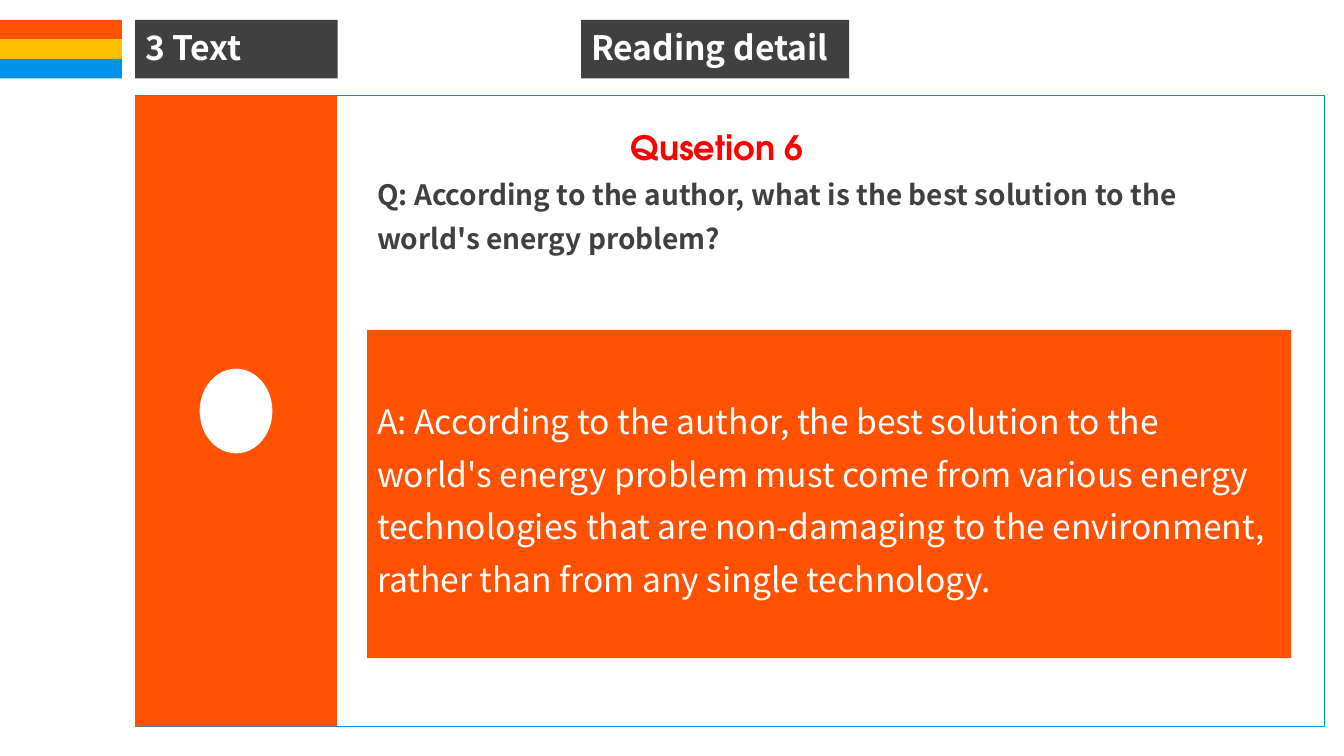
from pptx import Presentation
from pptx.dml.color import RGBColor
from pptx.enum.shapes import MSO_SHAPE as SHAPE
from pptx.enum.text import MSO_ANCHOR as ANCHOR, PP_ALIGN as ALIGN
from pptx.util import Pt

COLORS = {
    "orange": "FF5100",
    "yellow": "FFC100",
    "blue": "0092E8",
    "dark": "404040",
    "white": "FFFFFF",
    "red": "FF0000",
}
SANS = "Noto Sans CJK SC"
ROUND = "TeX Gyre Adventor"


def rgb(name):
    return RGBColor.from_string(COLORS[name])


def add_block(slide, x, y, w, h, fill, line=None, kind=SHAPE.RECTANGLE):
    sp = slide.shapes.add_shape(kind, Pt(x), Pt(y), Pt(w), Pt(h))
    sp.shadow.inherit = False
    sp.fill.solid()
    sp.fill.fore_color.rgb = rgb(fill)
    if line:
        sp.line.color.rgb = rgb(line)
        sp.line.width = Pt(1)
    else:
        sp.line.fill.background()
    return sp


def add_label(slide, x, y, w, h):
    return slide.shapes.add_textbox(Pt(x), Pt(y), Pt(w), Pt(h))


def write(sp, text, size=24, color="white", font=SANS, bold=False,
          align=ALIGN.LEFT, anchor=ANCHOR.MIDDLE, spacing=1.3):
    tf = sp.text_frame
    tf.word_wrap = True
    tf.vertical_anchor = anchor
    p = tf.paragraphs[0]
    p.alignment = align
    p.line_spacing = spacing
    r = p.add_run()
    r.text = text
    r.font.name = font
    r.font.size = Pt(size)
    r.font.bold = bold
    r.font.color.rgb = rgb(color)


def add_stripes(slide, x, y, w, h):
    names = ("orange", "yellow", "blue")
    step = h / len(names)
    for i, name in enumerate(names):
        add_block(slide, x, y + i * step, w, step, name)


def add_header(slide, x, y, w, h):
    add_stripes(slide, x, y, 87.2, h)
    for left, width, text in ((96.6, 144.6, "3 Text"),
                              (415.2, 191.4, "Reading detail")):
        sp = add_block(slide, x + left, y, width, h, "dark")
        write(sp, text, bold=True, spacing=0.9)


def add_question_panel(slide, x, y, w, h, title, question, answer):
    bar_w, dot_w, dot_h = 144, 52, 60.5
    text_x = x + 165.6
    add_block(slide, x, y, w, h, "white", line="blue")
    add_block(slide, x, y, bar_w, h, "orange")
    add_block(slide, x + (bar_w - dot_w) / 2, y + (h - dot_h) / 2,
              dot_w, dot_h, "white", kind=SHAPE.OVAL)
    write(add_label(slide, text_x, y + 47.5, 647.3, 70.6), question,
          size=20, color="dark", bold=True, anchor=ANCHOR.TOP)
    write(add_label(slide, x + 218, y + 10, 395.3, 44.6), title,
          color="red", font=ROUND, bold=True, align=ALIGN.CENTER,
          anchor=ANCHOR.TOP)
    write(add_block(slide, text_x, y + 167.2, 660, 234.5, "orange"), answer)


def main():
    prs = Presentation()
    prs.slide_width, prs.slide_height = Pt(960), Pt(540)
    slide = prs.slides.add_slide(prs.slide_layouts[6])
    add_header(slide, 0, 14.2, 960, 41.8)
    add_question_panel(
        slide, 96.6, 68.4, 849.6, 450.5,
        "Qusetion 6",
        "Q: According to the author, what is the best solution to the "
        "world's energy problem?",
        "A: According to the author, the best solution to the world's energy "
        "problem must come from various energy technologies that are "
        "non-damaging to the environment, rather than from any single "
        "technology.")
    prs.save("out.pptx")


if __name__ == "__main__":
    main()
